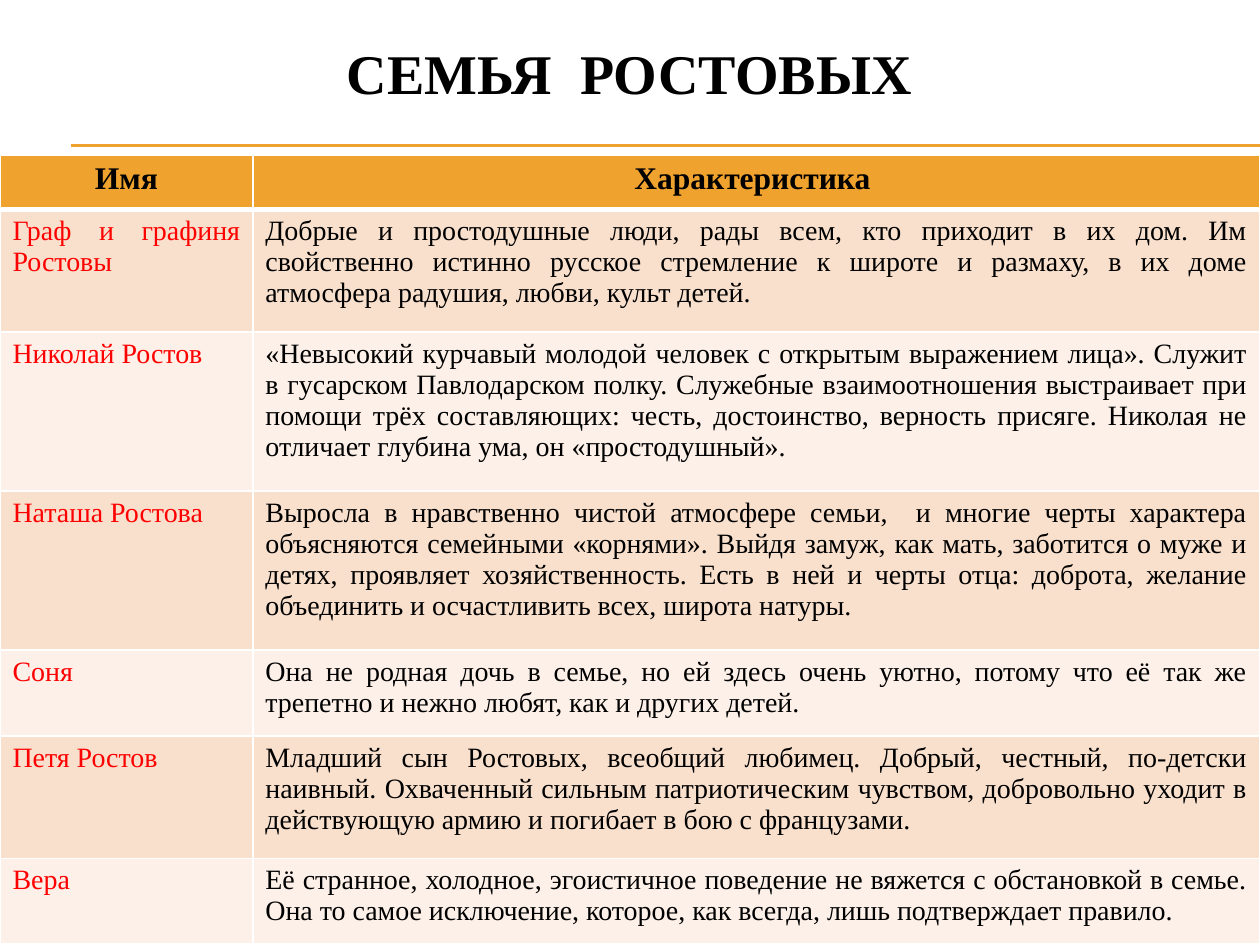
"""Build the slide on the Rostov family with its table of characters."""
from lxml import etree
from pptx import Presentation
from pptx.dml.color import RGBColor
from pptx.enum import shapes, text
from pptx.oxml import ns
from pptx.util import Pt

FONT = "Times New Roman"
BLACK, RED, WHITE, ORANGE = "000000", "FF0000", "FFFFFF", "F0A22E"
BANDS = ["F9E0CD", "FCF0E8"]
TITLE = "СЕМЬЯ  РОСТОВЫХ"
HEADINGS = ("Имя", "Характеристика ")
CHARACTERS = [
    ("Граф и графиня Ростовы",
     "Добрые и простодушные люди, рады всем, кто приходит в их дом. Им свойственно "
     "истинно русское стремление к широте и размаху, в их доме атмосфера радушия, "
     "любви, культ детей."),
    ("Николай Ростов",
     "«Невысокий курчавый молодой человек с открытым выражением лица». Служит в "
     "гусарском Павлодарском полку. Служебные взаимоотношения выстраивает при помощи "
     "трёх составляющих: честь, достоинство, верность присяге. Николая не отличает "
     "глубина ума, он «простодушный»."),
    ("Наташа Ростова",
     "Выросла в нравственно чистой атмосфере семьи,  и многие черты характера "
     "объясняются семейными «корнями». Выйдя замуж, как мать, заботится о муже и "
     "детях, проявляет хозяйственность. Есть в ней и черты отца: доброта, желание "
     "объединить и осчастливить всех, широта натуры."),
    ("Соня",
     "Она не родная дочь в семье, но ей здесь очень уютно, потому что её так же "
     "трепетно и нежно любят, как и других детей."),
    ("Петя Ростов",
     "Младший сын Ростовых, всеобщий любимец. Добрый, честный, по-детски наивный. "
     "Охваченный сильным патриотическим чувством, добровольно уходит в действующую "
     "армию и погибает в бою с французами."),
    ("Вера",
     "Её странное, холодное, эгоистичное поведение не вяжется с обстановкой в семье. "
     "Она то самое исключение, которое, как всегда, лишь подтверждает правило."),
]
WIDTH, HEIGHT = 720, 540
COLUMN_WIDTHS = [144.5, 575.5]
ROW_HEIGHTS = [31, 70, 91, 91, 49, 70, 49]
TABLE_TOP = 88.6
RULE_LEFT, RULE_TOPS = 40.5, [82.8, 83.5]


def color(value):
    return RGBColor.from_string(value)


def write(frame, words, size, ink, align, bold=False):
    frame.text = words
    paragraph = frame.paragraphs[0]
    paragraph.alignment = align
    font = paragraph.runs[0].font
    font.name, font.size, font.bold = FONT, Pt(size), bold
    font.color.rgb = color(ink)


def add_border(cell, side, width):
    line = etree.SubElement(cell._tc.get_or_add_tcPr(), ns.qn(f"a:ln{side}"), w=str(Pt(width)))
    fill = etree.SubElement(line, ns.qn("a:solidFill"))
    etree.SubElement(fill, ns.qn("a:srgbClr"), val=WHITE)


def add_title(slide):
    title = slide.shapes.add_textbox(Pt(36.5), Pt(0), Pt(646.5), Pt(82.8))
    title.text_frame.word_wrap = True
    title.text_frame.vertical_anchor = text.MSO_ANCHOR.MIDDLE
    write(title.text_frame, TITLE, 32, BLACK, text.PP_ALIGN.CENTER, True)


def add_rules(slide):
    for top in RULE_TOPS:
        rule = slide.shapes.add_connector(
            shapes.MSO_CONNECTOR.STRAIGHT, Pt(RULE_LEFT), Pt(top), Pt(WIDTH), Pt(top))
        rule.line.color.rgb = color(ORANGE)
        rule.line.width = Pt(0.75)
        etree.SubElement(rule._element.spPr, ns.qn("a:effectLst"))


def add_characters(slide):
    rows = [HEADINGS] + CHARACTERS
    table = slide.shapes.add_table(
        len(rows), len(HEADINGS), Pt(0), Pt(TABLE_TOP), Pt(WIDTH), Pt(sum(ROW_HEIGHTS))).table
    for column, width in zip(table.columns, COLUMN_WIDTHS):
        column.width = Pt(width)
    for r, (entries, height) in enumerate(zip(rows, ROW_HEIGHTS)):
        table.rows[r].height = Pt(height)
        for c, words in enumerate(entries):
            cell = table.cell(r, c)
            if r == 0:
                write(cell.text_frame, words, 18, BLACK, text.PP_ALIGN.CENTER, True)
            else:
                write(cell.text_frame, words, 16, (RED, BLACK)[c], text.PP_ALIGN.JUSTIFY)
            for side in "LRTB":
                add_border(cell, side, 3 if (r, side) in [(0, "B"), (1, "T")] else 1)
            cell.fill.solid()
            cell.fill.fore_color.rgb = color(BANDS[(r - 1) % 2] if r else ORANGE)


def main():
    deck = Presentation()
    deck.slide_width, deck.slide_height = Pt(WIDTH), Pt(HEIGHT)
    slide = deck.slides.add_slide(deck.slide_layouts[6])
    add_rules(slide)
    add_title(slide)
    add_characters(slide)
    deck.save("out.pptx")


if __name__ == "__main__":
    main()
